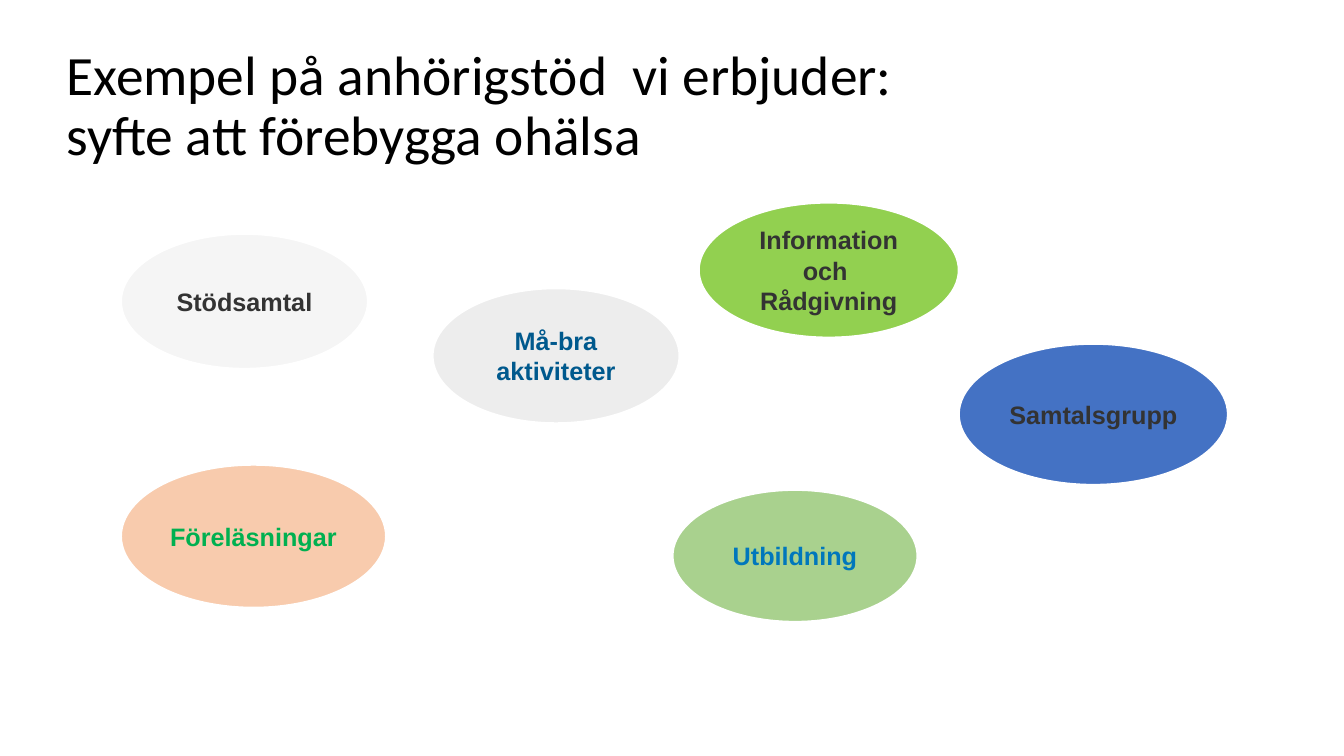
import pptx
import pptx.util
import pptx.dml.color
import pptx.enum.shapes
import pptx.enum.text

RGB = pptx.dml.color.RGBColor
ALIGN = pptx.enum.text.PP_ALIGN
BLACK = RGB(0x00, 0x00, 0x00)
WHITE = RGB(0xFF, 0xFF, 0xFF)
CHARCOAL = RGB(0x33, 0x33, 0x33)
PALE_GREY = RGB(0xF5, 0xF5, 0xF5)
GREY = RGB(0xED, 0xED, 0xED)
LIME = RGB(0x92, 0xD0, 0x50)
PEACH = RGB(0xF8, 0xCB, 0xAD)
SAGE = RGB(0xA9, 0xD1, 0x8E)
BLUE = RGB(0x44, 0x72, 0xC4)
DARK_BLUE = RGB(0x00, 0x59, 0x8D)
GREEN = RGB(0x00, 0xB0, 0x50)
SKY_BLUE = RGB(0x00, 0x77, 0xBC)

SLIDE_W = pptx.util.Inches(13.33)
SLIDE_H = pptx.util.Inches(7.5)

# Boxes are left, top, width, height in percent of the slide's size
TITLE_BOX = (4.2, 6.67, 68.04, 15.07)
SUPPORT_FORMS = [
    ("Stödsamtal", (9, 30.93, 18.38, 17.87), PALE_GREY, CHARCOAL),
    ("Må-bra aktiviteter", (32.18, 38.13, 18.38, 17.87), GREY, DARK_BLUE),
    ("Information och \nRådgivning", (51.99, 26.8, 19.35, 17.87), LIME, CHARCOAL),
    ("Föreläsningar", (9, 61.47, 19.73, 18.93), PEACH, GREEN),
    ("Utbildning", (50.04, 64.8, 18.23, 17.47), SAGE, SKY_BLUE),
    ("Samtalsgrupp", (71.34, 45.47, 20.03, 18.67), BLUE, CHARCOAL),
]


def to_lengths(box):
    sides = (SLIDE_W, SLIDE_H, SLIDE_W, SLIDE_H)
    return [round(side * share / 100) for side, share in zip(sides, box)]


def set_text(sp, text, font="Arial", size=18, color=CHARCOAL, bold=False,
             align=ALIGN.CENTER, line_spacing=1.0):
    tf = sp.text_frame
    tf.word_wrap = True
    tf.vertical_anchor = pptx.enum.text.MSO_ANCHOR.MIDDLE
    for i, line in enumerate(text.split("\n")):
        p = tf.add_paragraph() if i else tf.paragraphs[0]
        p.alignment = align
        p.line_spacing = line_spacing
        r = p.add_run()
        r.text = line
        r.font.name = font
        r.font.size = pptx.util.Pt(size)
        r.font.bold = bold
        r.font.color.rgb = color


def add_title(s, box, text):
    sp = s.shapes.add_textbox(*to_lengths(box))
    set_text(sp, text, font="Calibri", size=39.6, color=BLACK,
             align=ALIGN.LEFT, line_spacing=0.9)


def add_bubble(s, box, text, fill, color):
    oval = pptx.enum.shapes.MSO_SHAPE.OVAL
    sp = s.shapes.add_shape(oval, *to_lengths(box))
    sp.shadow.inherit = False
    sp.fill.solid()
    sp.fill.fore_color.rgb = fill
    sp.line.color.rgb = WHITE
    sp.line.width = pptx.util.Pt(1.5)
    set_text(sp, text, color=color, bold=True)


def main():
    prs = pptx.Presentation()
    prs.slide_width, prs.slide_height = SLIDE_W, SLIDE_H
    s = prs.slides.add_slide(prs.slide_layouts[6])

    # Heading
    add_title(s, TITLE_BOX,
              "Exempel på anhörigstöd  vi erbjuder: syfte att förebygga ohälsa")

    # Forms of support
    for text, box, fill, color in SUPPORT_FORMS:
        add_bubble(s, box, text, fill, color)

    prs.save("out.pptx")


if __name__ == "__main__":
    main()
